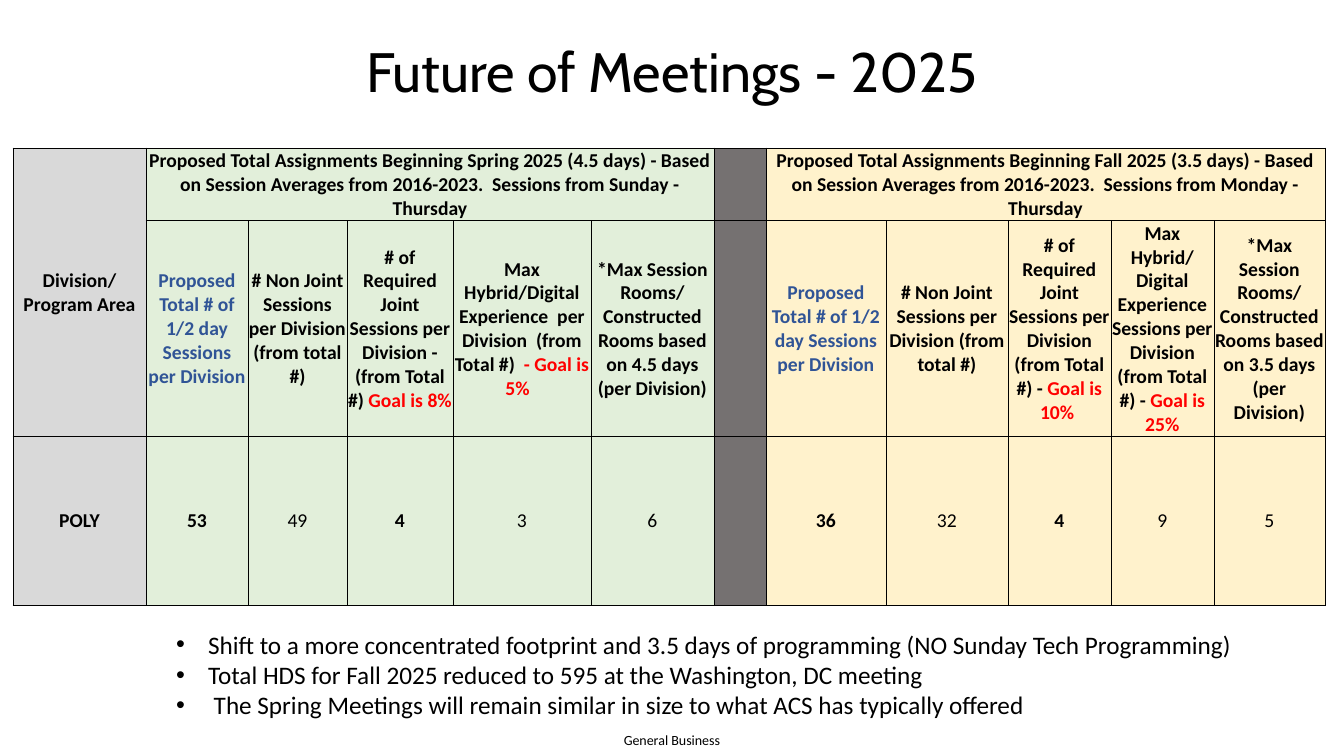
from lxml import etree
from pptx import Presentation
from pptx import util as u
from pptx.dml.color import RGBColor
from pptx.enum import text
from pptx.oxml.ns import qn

BLACK = RGBColor(0x00, 0x00, 0x00)
RED = RGBColor(0xFF, 0x00, 0x00)
BLUE = RGBColor(0x30, 0x54, 0x96)
GREY = RGBColor(0xD9, 0xD9, 0xD9)
DARK = RGBColor(0x75, 0x71, 0x71)
GREEN = RGBColor(0xE2, 0xEF, 0xDA)
YELLOW = RGBColor(0xFF, 0xF2, 0xCC)

# Content
TITLE = "Future of Meetings - 2025"
FOOTER = "General Business"
BULLETS = [
    "Shift to a more concentrated footprint and 3.5 days of programming (NO Sunday Tech Programming)",
    "Total HDS for Fall 2025 reduced to 595 at the Washington, DC meeting",
    " The Spring Meetings will remain similar in size to what ACS has typically offered",
]
AREA_HEADING, AREA = "Division/\nProgram Area", "POLY"
TOTAL = "Proposed Total # of 1/2 day Sessions per Division"
NON_JOINT = "# Non Joint Sessions per Division (from total #)"

# Each season: first column, fill, heading, (measure, goal, value)
SEASONS = [
    (1, GREEN,
     "Proposed Total Assignments Beginning Spring 2025 (4.5 days) - Based on Session "
     "Averages from 2016-2023.  Sessions from Sunday - Thursday",
     [(TOTAL, "", 53),
      (NON_JOINT, "", 49),
      ("# of Required Joint Sessions per Division -(from Total #)", " Goal is 8% ", 4),
      ("Max Hybrid/Digital Experience  per Division  (from Total #)", "  - Goal is 5%  ", 3),
      ("*Max Session Rooms/\nConstructed Rooms based on 4.5 days (per Division)", "", 6)]),
    (7, YELLOW,
     "Proposed Total Assignments Beginning Fall 2025 (3.5 days) - Based on Session "
     "Averages from 2016-2023.  Sessions from Monday - Thursday",
     [(TOTAL, "", 36),
      (NON_JOINT, "", 32),
      ("# of Required Joint Sessions per Division (from Total #) - ", "Goal is 10% ", 4),
      ("Max Hybrid/\nDigital Experience Sessions per Division (from Total #) - ", "Goal is 25%", 9),
      ("*Max Session Rooms/\nConstructed Rooms based on 3.5 days (per Division)", "", 5)]),
]
BOLD_VALUES = (0, 2)
DIVIDER = 6

# Geometry in px
COLUMNS = [133, 102, 99, 106, 138, 123, 52, 120, 122, 103, 103, 111]
ROWS = [72, 215, 169]
TABLE_LEFT, TABLE_TOP = 13, 148


def px(n):
    return u.Emu(round(n * 914400 / 100.8))


def apply(target, **formats):
    for name, value in formats.items():
        setattr(target, name, value)


def place(part, left, top, width, height):
    apply(part, left=px(left), top=px(top), width=px(width), height=px(height))


def style(font, size, color=BLACK, name="Calibri", bold=False):
    apply(font, size=u.Pt(size), name=name, bold=bold)
    font.color.rgb = color


def add_border(cell):
    props = cell._tc.get_or_add_tcPr()
    for index, side in enumerate(("lnL", "lnR", "lnT", "lnB")):
        line = etree.Element(qn("a:" + side), w=str(u.Pt(0.5)))
        fill = etree.SubElement(line, qn("a:solidFill"))
        etree.SubElement(fill, qn("a:srgbClr"), val=str(BLACK))
        props.insert(index, line)


def fill_cell(cell, words, goal="", color=BLACK, bold=True):
    apply(cell, vertical_anchor=text.MSO_ANCHOR.MIDDLE, margin_left=px(1),
          margin_right=px(1), margin_top=px(1), margin_bottom=0)
    frame = cell.text_frame
    for index, line in enumerate(words.split("\n")):
        paragraph = frame.add_paragraph() if index else frame.paragraphs[0]
        paragraph.alignment = text.PP_ALIGN.CENTER
        run = paragraph.add_run()
        run.text = line
        style(run.font, 14, color, bold=bold)
    if goal:
        run = paragraph.add_run()
        run.text = goal
        style(run.font, 14, RED, bold=bold)


deck = Presentation()
deck.slide_width, deck.slide_height = px(1344), px(756)
slide = deck.slides.add_slide(deck.slide_layouts[1])

# Title
title = slide.shapes.title
place(title, 67, 30, 1210, 81)
title.text_frame.text = TITLE
apply(title.text_frame, vertical_anchor=text.MSO_ANCHOR.MIDDLE, word_wrap=True,
      auto_size=text.MSO_AUTO_SIZE.NONE)
title.text_frame.paragraphs[0].alignment = text.PP_ALIGN.CENTER
style(title.text_frame.paragraphs[0].runs[0].font, 39.6, name="Cabin")

# Assignment table
table = slide.shapes.add_table(
    len(ROWS), len(COLUMNS), px(TABLE_LEFT), px(TABLE_TOP),
    px(sum(COLUMNS)), px(sum(ROWS))).table
apply(table, first_row=False, horz_banding=False)
for column, width in zip(table.columns, COLUMNS):
    column.width = px(width)
for row, height in zip(table.rows, ROWS):
    row.height = px(height)

column_fills = {0: GREY, DIVIDER: DARK}
for first, color, heading, measures in SEASONS:
    column_fills.update({first + i: color for i in range(len(measures))})
for r in range(len(ROWS)):
    for c, color in column_fills.items():
        cell = table.cell(r, c)
        cell.fill.solid()
        cell.fill.fore_color.rgb = color
        add_border(cell)

table.cell(0, 0).merge(table.cell(1, 0))
fill_cell(table.cell(0, 0), AREA_HEADING)
fill_cell(table.cell(2, 0), AREA)
for first, color, heading, measures in SEASONS:
    table.cell(0, first).merge(table.cell(0, first + len(measures) - 1))
    fill_cell(table.cell(0, first), heading)
    for i, (measure, goal, value) in enumerate(measures):
        fill_cell(table.cell(1, first + i), measure, goal, BLACK if i else BLUE)
        fill_cell(table.cell(2, first + i), str(value), bold=i in BOLD_VALUES)

# Bullet list
takeaways = slide.placeholders[1]
place(takeaways, 166, 624, 1097, 102)
frame = takeaways.text_frame
frame.text = "\n".join(BULLETS)
apply(frame, word_wrap=False, auto_size=text.MSO_AUTO_SIZE.NONE,
      vertical_anchor=text.MSO_ANCHOR.TOP)
for paragraph in frame.paragraphs:
    props = paragraph._p.get_or_add_pPr()
    props.set("marL", str(px(32)))
    props.set("indent", str(px(-32)))
    apply(paragraph, alignment=text.PP_ALIGN.LEFT, space_before=u.Pt(0))
    etree.SubElement(props, qn("a:buFont"), typeface="Arial")
    etree.SubElement(props, qn("a:buChar"), char="•")
    style(paragraph.runs[0].font, 18)

# Footer label
footer = slide.shapes.add_textbox(px(622), px(732), px(100), px(17))
frame = footer.text_frame
frame.text = FOOTER
apply(frame, margin_left=0, margin_right=0, margin_top=0, margin_bottom=0, word_wrap=False)
frame.paragraphs[0].alignment = text.PP_ALIGN.CENTER
style(frame.paragraphs[0].runs[0].font, 10)

deck.save("out.pptx")
